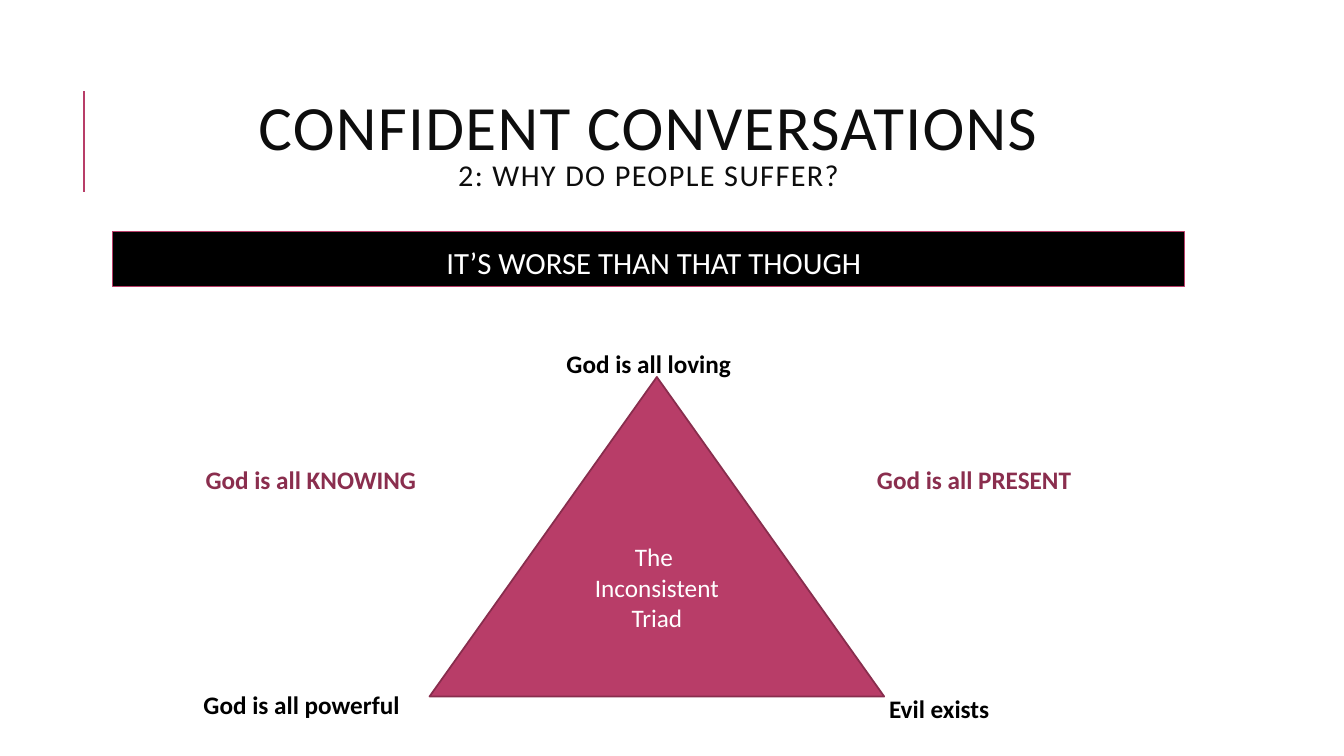
"""Build the Inconsistent Triad slide."""
from dataclasses import dataclass

import lxml.etree
import pptx
import pptx.dml.color
import pptx.enum.shapes
import pptx.enum.text
import pptx.oxml.ns
import pptx.util

PX = 9144
COLORS = {
    "title": "0D0D0D",
    "black": "000000",
    "white": "FFFFFF",
    "rose": "B83D68",
    "outline": "882D4D",
    "plum": "8A2E4E",
}
SHAPE = pptx.enum.shapes.MSO_SHAPE
CENTER = pptx.enum.text.PP_ALIGN.CENTER
TAB_STOP = 666


@dataclass(frozen=True)
class Box:
    left: int
    top: int
    width: int
    height: int

    def emu(self) -> list[int]:
        return [v * PX for v in (self.left, self.top, self.width, self.height)]


@dataclass(frozen=True)
class Label:
    text: str
    box: Box
    color: str = "black"
    wrap: bool = False


@dataclass(frozen=True)
class Block:
    preset: int
    box: Box
    fill: str
    line: str
    line_pt: float
    lines: tuple[str, ...]
    size: float
    spacing: float = 1.0
    margins: tuple[int, int, int, int] = (10, 5, 10, 5)


LABELS = (
    Label("God is all loving", Box(552, 341, 215, 40)),
    Label("God is all powerful", Box(192, 679, 246, 40)),
    Label("Evil exists", Box(872, 683, 144, 40)),
    Label("God is all KNOWING\tGod is all PRESENT", Box(194, 456, 1006, 40), "plum", True),
)
BLOCKS = (
    Block(SHAPE.RECTANGLE, Box(112, 230, 1063, 54), "black", "rose", 0.75,
          ("IT’S WORSE THAN THAT THOUGH",), 22, 1.2, (15, 5, 5, 5)),
    Block(SHAPE.ISOSCELES_TRIANGLE, Box(426, 374, 451, 317), "rose", "outline", 1.25,
          ("The ", "Inconsistent", "Triad"), 18),
)
TITLE_LINES = (("CONFIDENT CONVERSATIONS", 45), ("2: WHY DO PEOPLE SUFFER?", 21.6))


def rgb(name: str) -> pptx.dml.color.RGBColor:
    return pptx.dml.color.RGBColor.from_string(COLORS[name])


def add_run(p, text: str, size: float, color: str, bold: bool = False):
    r = p.add_run()
    r.text = text
    r.font.name = "Calibri"
    r.font.size = pptx.util.Pt(size)
    r.font.bold = bold
    r.font.color.rgb = rgb(color)
    return r


def add_rule(s) -> None:
    line = s.shapes.add_connector(
        pptx.enum.shapes.MSO_CONNECTOR.STRAIGHT, 83 * PX, 190 * PX, 83 * PX, 90 * PX)
    line.line.color.rgb = rgb("rose")
    line.line.width = pptx.util.Pt(1.5)
    lxml.etree.SubElement(line._element.spPr, pptx.oxml.ns.qn("a:effectLst"))


def add_title(s) -> None:
    tf = s.shapes.add_textbox(*Box(112, 64, 1063, 164).emu()).text_frame
    tf.word_wrap = True
    tf.vertical_anchor = pptx.enum.text.MSO_ANCHOR.MIDDLE
    p = tf.paragraphs[0]
    p.alignment = CENTER
    p.line_spacing = 0.8
    for i, (text, size) in enumerate(TITLE_LINES):
        if i:
            p.add_line_break()
        r = add_run(p, text, size, "title")
        r._r.get_or_add_rPr().set("spc", "100")


def add_block(s, block: Block) -> None:
    sp = s.shapes.add_shape(block.preset, *block.box.emu())
    sp.shadow.inherit = False
    sp.fill.solid()
    sp.fill.fore_color.rgb = rgb(block.fill)
    sp.line.color.rgb = rgb(block.line)
    sp.line.width = pptx.util.Pt(block.line_pt)
    tf = sp.text_frame
    tf.word_wrap = True
    tf.vertical_anchor = pptx.enum.text.MSO_ANCHOR.TOP
    tf.margin_left, tf.margin_top, tf.margin_right, tf.margin_bottom = (
        m * PX for m in block.margins)
    for i, text in enumerate(block.lines):
        p = tf.add_paragraph() if i else tf.paragraphs[0]
        p.alignment = CENTER
        p.line_spacing = block.spacing
        add_run(p, text, block.size, "white")


def add_label(s, label: Label) -> None:
    tf = s.shapes.add_textbox(*label.box.emu()).text_frame
    tf.word_wrap = label.wrap
    tf.auto_size = pptx.enum.text.MSO_AUTO_SIZE.SHAPE_TO_FIT_TEXT
    p = tf.paragraphs[0]
    if "\t" in label.text:
        qn = pptx.oxml.ns.qn
        tabs = lxml.etree.SubElement(p._p.get_or_add_pPr(), qn("a:tabLst"))
        lxml.etree.SubElement(tabs, qn("a:tab"), pos=str(TAB_STOP * PX), algn="l")
    add_run(p, label.text, 18, label.color, True)


def main() -> None:
    prs = pptx.Presentation()
    prs.slide_width, prs.slide_height = 1333 * PX, 750 * PX
    s = prs.slides.add_slide(prs.slide_layouts[6])
    add_rule(s)
    add_title(s)
    for block in BLOCKS:
        add_block(s, block)
    for label in LABELS:
        add_label(s, label)
    prs.save("out.pptx")


if __name__ == "__main__":
    main()
